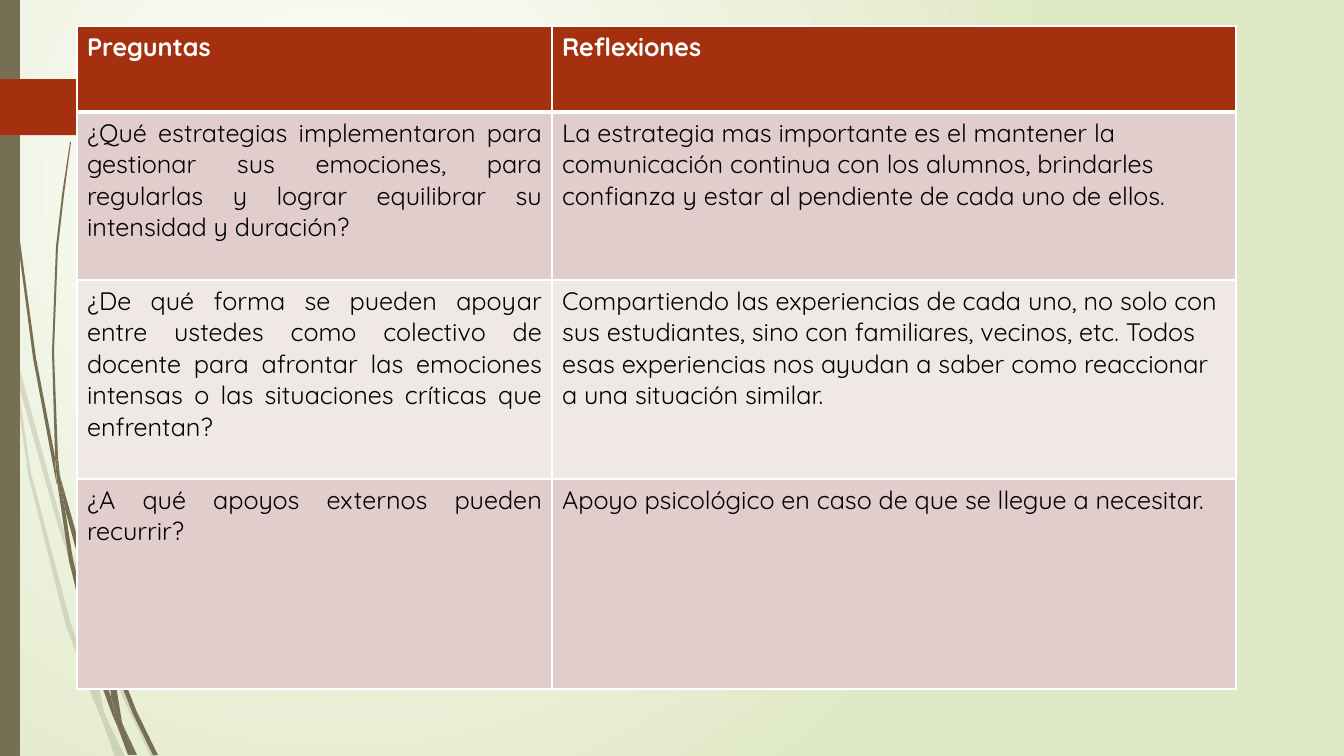
from lxml import etree
from pptx import Presentation
from pptx.dml.color import RGBColor
from pptx.enum.shapes import MSO_SHAPE
from pptx.enum.text import PP_ALIGN
from pptx.oxml.ns import qn
from pptx.util import Pt

RECTANGLE = MSO_SHAPE.RECTANGLE
PENTAGON = MSO_SHAPE.PENTAGON
JUSTIFY = PP_ALIGN.JUSTIFY
LEFT = PP_ALIGN.LEFT

WIDTH, HEIGHT = 1344, 756
EMU_PER_PX = 12192000 / WIDTH
COLORS = {
    "white": "FFFFFF", "black": "000000", "green": "DFE8C4", "olive": "766F54",
    "rust": "A53010", "rose": "E1CDCC", "pale rose": "F0E8E7",
}

# Each blade of grass is made of pieces that meet at their ends.
PALE_PIECES = [
    [(11, 353), (9, 325), (0, 284), (0, 301), (10, 347)],
    [(58, 526), (84, 604), (86, 591), (62, 524), (14, 348), (17, 379)],
    [(93, 612), (89, 601), (89, 615), (124, 700), (151, 757), (156, 757), (128, 698)],
    [(120, 757), (125, 757), (106, 717)],
    [(94, 688), (71, 624), (31, 473), (17, 379), (11, 353), (28, 474), (66, 626), (93, 699),
     (102, 720), (100, 713)],
    [(85, 604), (88, 651), (94, 688), (97, 698), (106, 717), (104, 712), (92, 651), (89, 615), (89, 613)],
    [(89, 589), (111, 466), (161, 352), (231, 247), (270, 200), (292, 176), (314, 155), (314, 154),
     (291, 176), (270, 199), (230, 246), (159, 351), (108, 465), (86, 589), (86, 591), (89, 601)],
    [(102, 720), (115, 757), (120, 757)],
    [(89, 613), (89, 615), (89, 601), (86, 591), (85, 604)],
    [(97, 698), (94, 688), (100, 713), (102, 720), (120, 757), (106, 717)],
]
DARK_PIECES = [
    [(7, 111), (17, 235), (33, 358), (56, 481), (57, 485), (55, 461), (55, 457), (36, 358), (19, 234),
     (8, 110), (5, 48), (4, 0), (3, 0), (4, 48)],
    [(89, 597), (107, 650), (107, 638), (107, 636), (94, 595), (60, 476), (65, 509)],
    [(114, 654), (111, 646), (112, 661), (133, 714), (153, 755), (158, 755), (137, 712)],
    [(111, 697), (99, 662), (73, 560), (65, 509), (57, 481), (69, 561), (94, 664), (112, 714),
     (118, 728), (117, 723)],
    [(60, 476), (58, 457), (54, 352), (58, 247), (64, 195), (71, 142), (70, 142), (62, 195), (56, 247),
     (52, 352), (55, 453)],
    [(134, 755), (137, 755), (123, 725)],
    [(57, 481), (65, 509), (60, 476), (55, 453), (55, 457)],
    [(112, 638), (126, 556), (159, 480), (207, 409), (233, 377), (247, 362), (263, 347), (262, 347),
     (247, 361), (233, 376), (206, 408), (157, 478), (123, 555), (107, 636), (111, 646)],
    [(118, 728), (128, 755), (132, 755)],
    [(107, 650), (111, 697), (117, 712), (123, 725), (122, 722), (112, 661), (110, 656)],
    [(107, 650), (110, 656), (112, 661), (111, 646), (107, 636), (107, 638)],
    [(117, 712), (111, 697), (117, 723), (118, 728), (131, 755), (134, 755), (123, 725)],
]

HEADINGS = ("Preguntas", "Reflexiones")
ANSWERS = [
    ("¿Qué estrategias implementaron para gestionar sus emociones, para regularlas y lograr "
     "equilibrar su intensidad y duración?",
     "La estrategia mas importante es el mantener la comunicación continua con los alumnos, "
     "brindarles confianza y estar al pendiente de cada uno de ellos."),
    ("¿De qué forma se pueden apoyar entre ustedes como colectivo de docente para afrontar las "
     "emociones intensas o las situaciones críticas que enfrentan?",
     "Compartiendo las experiencias de cada uno, no solo con sus estudiantes, sino con familiares, "
     "vecinos, etc. Todos esas experiencias nos ayudan a saber como reaccionar a una situación similar."),
    ("¿A qué apoyos externos pueden recurrir?",
     "Apoyo psicológico en caso de que se llegue a necesitar."),
]
COLUMN_WIDTHS = (475, 684)
ROW_HEIGHTS = (86, 168, 199, 210)


def emu(px):
    return round(px * EMU_PER_PX)


def rgb(color):
    return RGBColor.from_string(COLORS[color])


class SlideBuilder:
    font_name = "Quicksand"
    font_size = Pt(18)

    def __init__(self, slide):
        self.slide = slide

    def background(self, center, edge):
        fill = self.slide.background.fill
        fill.gradient()
        for stop, color in zip(fill.gradient_stops, (center, edge)):
            stop.color.rgb = rgb(color)
        gradient = self.slide.element.find(".//" + qn("a:gradFill"))
        gradient.remove(gradient.find(qn("a:lin")))
        circle = etree.SubElement(gradient, qn("a:path"))
        circle.set("path", "circle")
        target = etree.SubElement(circle, qn("a:fillToRect"))
        for side, percent in zip("ltrb", (50, 50, 100, 100)):
            target.set(side, str(percent * 1000))

    def paint(self, shape, color, opacity=100):
        shape.shadow.inherit = False
        shape.line.fill.background()
        shape.fill.solid()
        shape.fill.fore_color.rgb = rgb(color)
        if opacity < 100:
            tone = shape.element.spPr.find(".//" + qn("a:srgbClr"))
            etree.SubElement(tone, qn("a:alpha")).set("val", str(opacity * 1000))

    def shape(self, kind, left, top, width, height, color):
        shape = self.slide.shapes.add_shape(kind, emu(left), emu(top), emu(width), emu(height))
        self.paint(shape, color)
        return shape

    def outline(self, points, color, opacity=100):
        builder = self.slide.shapes.build_freeform(*points[0], scale=EMU_PER_PX)
        builder.add_line_segments(points[1:], close=True)
        self.paint(builder.convert_to_shape(), color, opacity)

    def borders(self, cell, **widths):
        for side, width in widths.items():
            line = etree.SubElement(cell._tc.get_or_add_tcPr(), qn("a:ln" + side))
            line.set("w", str(Pt(width)))
            fill = etree.SubElement(line, qn("a:solidFill"))
            etree.SubElement(fill, qn("a:srgbClr")).set("val", COLORS["white"])

    def cell(self, cell, text, color, is_header, alignment):
        if is_header:
            self.borders(cell, L=1, R=1, T=1, B=3)
        cell.fill.solid()
        cell.fill.fore_color.rgb = rgb(color)
        paragraph = cell.text_frame.paragraphs[0]
        paragraph.alignment = alignment
        run = paragraph.add_run()
        run.text = text
        run.font.name = self.font_name
        run.font.size = self.font_size
        run.font.bold = is_header
        run.font.color.rgb = rgb("white" if is_header else "black")

    def table(self, left, top, widths, heights, rows):
        frame = self.slide.shapes.add_table(
            len(rows), len(widths), emu(left), emu(top), emu(sum(widths)), emu(sum(heights)))
        table = frame.table
        for column, width in zip(table.columns, widths):
            column.width = emu(width)
        for index, (row, height, texts) in enumerate(zip(table.rows, heights, rows)):
            row.height = emu(height)
            is_header = index == 0
            color = "rust" if is_header else ("pale rose", "rose")[index % 2]
            for column, (cell, text) in enumerate(zip(row.cells, texts)):
                alignment = LEFT if is_header or column else JUSTIFY
                self.cell(cell, text, color, is_header, alignment)


def main():
    presentation = Presentation()
    presentation.slide_width = emu(WIDTH)
    presentation.slide_height = emu(HEIGHT)
    builder = SlideBuilder(presentation.slides.add_slide(presentation.slide_layouts[6]))

    builder.background("white", "green")
    for piece in PALE_PIECES:
        builder.outline(piece, "olive", opacity=20)
    for piece in DARK_PIECES:
        builder.outline(piece, "olive")
    builder.shape(RECTANGLE, 0, 0, 20, HEIGHT, "olive")
    tag = builder.shape(PENTAGON, 0, 79, 175, 56, "rust")
    tag.adjustments[0] = 0.47
    builder.table(77, 26, COLUMN_WIDTHS, ROW_HEIGHTS, [HEADINGS, *ANSWERS])

    presentation.save("out.pptx")


if __name__ == "__main__":
    main()
